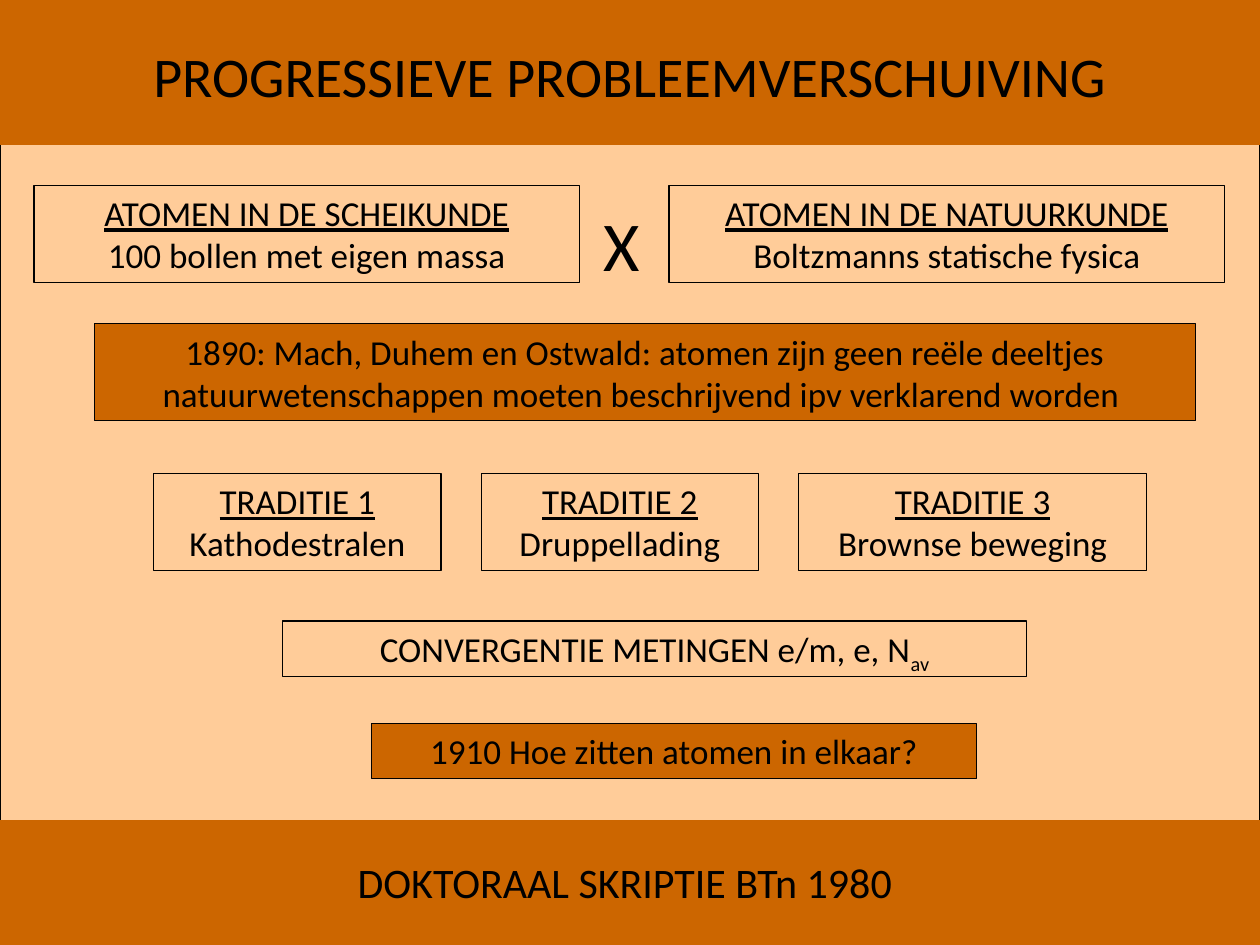
from pptx import Presentation
from pptx.dml.color import RGBColor
from pptx.enum.shapes import MSO_SHAPE
from pptx.enum.text import MSO_ANCHOR, PP_ALIGN
from pptx.util import Inches, Pt

BLACK, DARK, LIGHT = "000000", "CC6600", "FFCC99"


def color(code):
    """Turn a hex string into a colour."""
    return RGBColor.from_string(code)


class Deck:
    """Hold the style and the current slide."""

    def __init__(self, font, size):
        """Start a deck with one blank slide."""
        self.font, self.size = font, size
        self.prs = Presentation()
        self.prs.slide_width, self.prs.slide_height = Inches(10), Inches(7.5)
        self.slide = self.prs.slides.add_slide(self.prs.slide_layouts[6])

    def panel(self, x, y, w, h, fill=None, line=BLACK):
        """Add a rectangle."""
        shape = self.slide.shapes.add_shape(
            MSO_SHAPE.RECTANGLE, Inches(x), Inches(y), Inches(w), Inches(h))
        shape.shadow.inherit = False
        if fill:
            shape.fill.solid()
            shape.fill.fore_color.rgb = color(fill)
        else:
            shape.fill.background()
        shape.line.color.rgb = color(line)
        shape.line.width = Pt(0.75)
        return shape

    def run(self, para, text, size=None, under=False, base=0):
        """Add one run to a paragraph."""
        run = para.add_run()
        run.text = text
        font = run.font
        font.name, font.size = self.font, Pt(size or self.size)
        font.color.rgb = color(BLACK)
        font.underline = under
        if base:
            run._r.get_or_add_rPr().set("baseline", str(base * 1000))

    def lines(self, shape, rows, size=None, head=False, align=PP_ALIGN.CENTER):
        """Write rows of text, the first underlined if it is a head."""
        frame = shape.text_frame
        frame.word_wrap = True
        frame.vertical_anchor = MSO_ANCHOR.TOP
        for i, row in enumerate(rows):
            para = frame.add_paragraph() if i else frame.paragraphs[0]
            para.alignment = align
            self.run(para, row, size, head and i == 0)

    def box(self, x, y, w, h, rows, fill=None, head=False):
        """Add a framed box of text."""
        shape = self.panel(x, y, w, h, fill)
        self.lines(shape, rows, head=head)
        return shape

    def label(self, x, y, w, h, text, size, align=PP_ALIGN.CENTER):
        """Add a plain line of text."""
        shape = self.slide.shapes.add_textbox(
            Inches(x), Inches(y), Inches(w), Inches(h))
        self.lines(shape, [text], size, align=align)


def main():
    """Build the slide and save it."""
    deck = Deck("Calibri", 20)
    tall, low = 0.77, 0.44
    deck.panel(0, 0, 10, 7.5, LIGHT)
    deck.panel(0, 0, 10, 1.15, DARK, DARK)
    deck.label(0, 0.28, 10, 0.64, "PROGRESSIEVE PROBLEEMVERSCHUIVING", 32)
    deck.box(0.75, 2.57, 8.74, tall, [
        "1890: Mach, Duhem en Ostwald: atomen zijn geen reële deeltjes",
        "natuurwetenschappen moeten beschrijvend ipv verklarend worden "], DARK)

    left, gap = 1.22, 0.32
    trads = [(2.28, "Kathodestralen"), (2.2, "Druppellading"),
             (2.76, "Brownse beweging")]
    for num, (wide, topic) in enumerate(trads, 1):
        deck.box(left, 3.76, wide, tall, [f"TRADITIE {num}", topic], head=True)
        left += wide + gap

    for x, wide, field, topic in [
            (0.27, 4.33, "SCHEIKUNDE", "100 bollen met eigen massa"),
            (5.31, 4.41, "NATUURKUNDE", "Boltzmanns statische fysica")]:
        deck.box(x, 1.47, wide, tall, [f"ATOMEN IN DE {field}", topic], head=True)

    union = deck.box(2.24, 4.93, 5.91, low, ["CONVERGENTIE METINGEN e/m, e, N"])
    deck.run(union.text_frame.paragraphs[0], "av", base=-25)
    deck.box(2.95, 5.74, 4.8, low, ["1910 Hoe zitten atomen in elkaar?"], DARK)
    deck.label(4.69, 1.55, 0.55, tall, "X", 40, PP_ALIGN.LEFT)
    deck.panel(0, 6.51, 10, 0.99, DARK, DARK)
    deck.label(-0.04, 6.75, 10, 0.5, "DOKTORAAL SKRIPTIE BTn 1980", 24)
    deck.prs.save("out.pptx")


if __name__ == "__main__":
    main()
